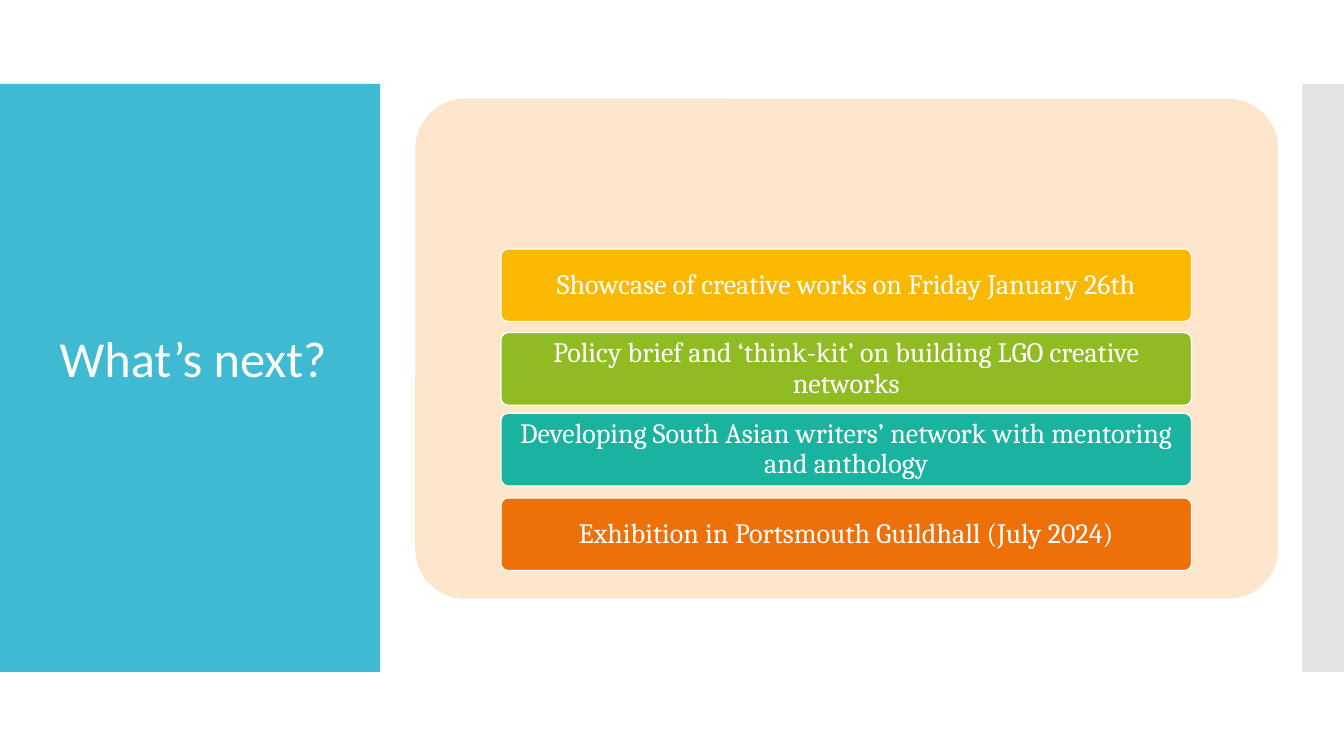
from dataclasses import dataclass

from lxml import etree
from pptx import Presentation
from pptx.dml.color import RGBColor
from pptx.enum.shapes import MSO_SHAPE
from pptx.enum.text import MSO_ANCHOR, MSO_AUTO_SIZE, PP_ALIGN
from pptx.oxml.ns import qn
from pptx.shapes.autoshape import Shape
from pptx.slide import Slide
from pptx.util import Inches, Pt

RECT, ROUNDED = MSO_SHAPE.RECTANGLE, MSO_SHAPE.ROUNDED_RECTANGLE
MIDDLE = MSO_ANCHOR.MIDDLE
LEFT, CENTER = PP_ALIGN.LEFT, PP_ALIGN.CENTER
NO_AUTOFIT = MSO_AUTO_SIZE.NONE
TITLE_ONLY = 5

SLIDE_W, SLIDE_H = Inches(13.333), Inches(7.5)
COLORS = {
    "white": "FFFFFF",
    "sidebar": "40BAD2",
    "edge": "C8C8C8",
    "panel": "FDE6CC",
    "yellow": "FAB900",
    "green": "90BB23",
    "teal": "1AB39F",
    "orange": "EE7008",
}


@dataclass(frozen=True)
class Area:
    """Position and size in percent of the slide's width and height."""
    left: float
    top: float
    width: float
    height: float

    def place(self) -> tuple[int, int, int, int]:
        return (round(SLIDE_W * self.left / 100), round(SLIDE_H * self.top / 100),
                round(SLIDE_W * self.width / 100), round(SLIDE_H * self.height / 100))


@dataclass(frozen=True)
class Step:
    text: str
    color: str
    top: float


SIDEBAR = Area(0, 11.11, 28.28, 77.78)
EDGE = Area(96.88, 11.11, 3.12, 77.78)
PANEL = Area(30.9, 13.07, 64.2, 66.13)
TITLE = Area(3.68, 42.53, 22.5, 9.47)
STEP_LEFT, STEP_WIDTH, STEP_HEIGHT = 37.28, 51.38, 9.6
STEPS = (
    Step("Showcase of creative works on Friday January 26th", "yellow", 32.93),
    Step("Policy brief and ‘think-kit’ on building LGO creative networks", "green", 44),
    Step("Developing South Asian writers’ network with mentoring and anthology", "teal", 54.67),
    Step("Exhibition in Portsmouth Guildhall (July 2024)", "orange", 65.87),
)


def rgb(name: str) -> RGBColor:
    return RGBColor.from_string(COLORS[name])


def add_block(slide: Slide, area: Area, color: str, kind: MSO_SHAPE = RECT,
              outline: str | None = None) -> Shape:
    block = slide.shapes.add_shape(kind, *area.place())
    block.shadow.inherit = False
    block.fill.solid()
    block.fill.fore_color.rgb = rgb(color)
    if kind == ROUNDED:
        block.adjustments[0] = 0.1
    if outline:
        block.line.color.rgb = rgb(outline)
        block.line.width = Pt(0.85)
    else:
        block.line.fill.background()
    return block


def set_opacity(block: Shape, percent: int) -> None:
    color = block.element.spPr.find(qn("a:solidFill"))[0]
    etree.SubElement(color, qn("a:alpha"), val=str(percent * 1000))


def write_text(target: Shape, text: str, *, size: float, font: str, color: str = "white",
               align: PP_ALIGN = LEFT, spacing: float = 1.0,
               inset: tuple[float, float] = (0.1, 0.05)) -> None:
    frame = target.text_frame
    frame.text = text
    frame.word_wrap = True
    frame.auto_size = NO_AUTOFIT
    frame.vertical_anchor = MIDDLE
    frame.margin_left = frame.margin_right = Inches(inset[0])
    frame.margin_top = frame.margin_bottom = Inches(inset[1])
    paragraph = frame.paragraphs[0]
    paragraph.alignment = align
    paragraph.line_spacing = spacing
    style = paragraph.runs[0].font
    style.size, style.name, style.color.rgb = Pt(size), font, rgb(color)


def main() -> None:
    prs = Presentation()
    prs.slide_width, prs.slide_height = SLIDE_W, SLIDE_H
    slide = prs.slides.add_slide(prs.slide_layouts[TITLE_ONLY])

    # Side bands
    add_block(slide, SIDEBAR, "sidebar")
    edge = add_block(slide, EDGE, "edge")
    set_opacity(edge, 50)

    # Panel with the next steps
    add_block(slide, PANEL, "panel", ROUNDED)
    for step in STEPS:
        area = Area(STEP_LEFT, step.top, STEP_WIDTH, STEP_HEIGHT)
        card = add_block(slide, area, step.color, ROUNDED, outline="white")
        write_text(card, step.text, size=20, font="Cambria", align=CENTER,
                   spacing=0.9, inset=(0.07, 0.04))

    # Title, brought in front of the sidebar
    title = slide.shapes.title
    title.left, title.top, title.width, title.height = TITLE.place()
    write_text(title, "What’s next?", size=36, font="Calibri")
    title.element.getparent().append(title.element)

    prs.save("out.pptx")


if __name__ == "__main__":
    main()
